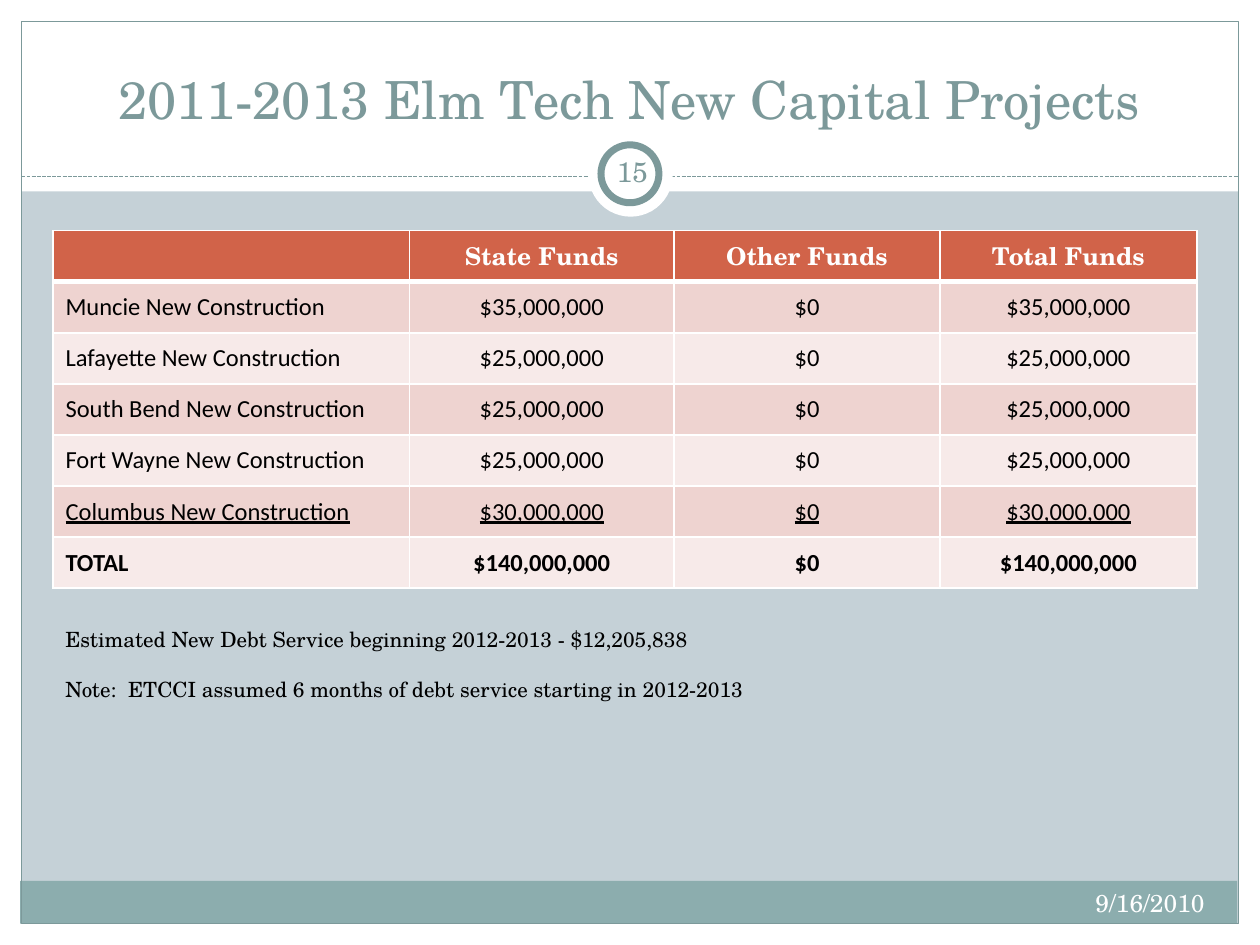
from dataclasses import dataclass

from lxml.etree import SubElement
from pptx import Presentation
from pptx.dml.color import RGBColor
from pptx.enum.dml import MSO_LINE_DASH_STYLE as Dash
from pptx.enum.shapes import MSO_CONNECTOR as Connector, MSO_SHAPE as Shape
from pptx.enum.text import MSO_ANCHOR as Anchor, PP_ALIGN as Align
from pptx.oxml import parse_xml
from pptx.oxml.ns import nsdecls, qn
from pptx.util import Emu, Inches, Pt

COLORS = {
    "white": "FFFFFF", "black": "000000", "backdrop": "C5D1D7",
    "teal": "7C999A", "footer": "8CADAE", "header": "D16349",
    "odd row": "EED3D0", "even row": "F7EAE9",
}
SERIF, SANS = "TeX Gyre Schola", "Calibri"
WIDTH, HEIGHT = Inches(10), Inches(7.5)


@dataclass(frozen=True)
class Box:
    """A place in percent of the slide's width and height."""
    left: float
    top: float
    width: float
    height: float

    def emu(self) -> tuple:
        return (across(self.left), down(self.top),
                across(self.width), down(self.height))


@dataclass(frozen=True)
class Panel:
    box: Box
    fill: str = ""
    line: str = ""
    line_width: float = 0.75
    kind: Shape = Shape.RECTANGLE


@dataclass(frozen=True)
class Style:
    size: int
    color: str
    font: str = SERIF
    align: Align = Align.LEFT
    bold: bool = False
    underline: bool = False


@dataclass(frozen=True)
class Label:
    box: Box
    lines: tuple
    style: Style
    anchor: Anchor = Anchor.TOP
    inset: float = 0
    gap: float = 0


def across(percent: float) -> Emu:
    return Emu(round(WIDTH * percent / 100))


def down(percent: float) -> Emu:
    return Emu(round(HEIGHT * percent / 100))


def rgb(name: str) -> RGBColor:
    return RGBColor.from_string(COLORS[name])


def style_paragraph(paragraph, style: Style) -> None:
    paragraph.alignment = style.align
    for run in paragraph.runs:
        font = run.font
        font.name, font.size = style.font, Pt(style.size)
        font.bold, font.underline = style.bold, style.underline
        font.color.rgb = rgb(style.color)


def draw_panel(slide, panel: Panel) -> None:
    shape = slide.shapes.add_shape(panel.kind, *panel.box.emu())
    shape.shadow.inherit = False
    if panel.fill:
        shape.fill.solid()
        shape.fill.fore_color.rgb = rgb(panel.fill)
    else:
        shape.fill.background()
    if panel.line:
        shape.line.color.rgb = rgb(panel.line)
        shape.line.width = Pt(panel.line_width)
    else:
        shape.line.fill.background()


def draw_divider(slide, left: float, right: float, top: float) -> None:
    divider = slide.shapes.add_connector(
        Connector.STRAIGHT, across(left), down(top), across(right), down(top))
    divider.line.color.rgb = rgb("teal")
    divider.line.width = Pt(0.75)
    divider.line.dash_style = Dash.SQUARE_DOT
    SubElement(divider._element.spPr, qn("a:effectLst"))


def draw_label(slide, label: Label) -> None:
    frame = slide.shapes.add_textbox(*label.box.emu()).text_frame
    frame.word_wrap = True
    frame.vertical_anchor = label.anchor
    if label.inset:
        frame.margin_left = frame.margin_right = Inches(label.inset)
        frame.margin_top = frame.margin_bottom = Inches(label.inset)
    frame.text = "\n".join(label.lines)
    for index, paragraph in enumerate(frame.paragraphs):
        style_paragraph(paragraph, label.style)
        if index:
            paragraph.space_before = Pt(label.gap)


def set_borders(cell, top: float, bottom: float) -> None:
    sides = (("L", 1), ("R", 1), ("T", top), ("B", bottom))
    for index, (side, width) in enumerate(sides):
        cell._tc.get_or_add_tcPr().insert(index, parse_xml(
            f'<a:ln{side} {nsdecls("a")} w="{Pt(width)}"><a:solidFill>'
            f'<a:srgbClr val="{COLORS["white"]}"/></a:solidFill></a:ln{side}>'))


def draw_funds_table(slide, box: Box, columns: tuple, rows: tuple) -> None:
    table = slide.shapes.add_table(len(rows), len(columns), *box.emu()).table
    for column, share in zip(table.columns, columns):
        column.width = across(share)
    last = len(rows) - 1
    for r, values in enumerate(rows):
        is_header, is_total = r == 0, r == last
        fill = "header" if is_header else "odd row" if r % 2 else "even row"
        for c, value in enumerate(values):
            cell = table.cell(r, c)
            cell.fill.solid()
            cell.fill.fore_color.rgb = rgb(fill)
            set_borders(cell, 3 if r == 1 else 1, 3 if is_header else 1)
            cell.vertical_anchor = Anchor.TOP if is_header else Anchor.MIDDLE
            if is_total and c:
                cell.margin_left = cell.margin_right = Inches(0.01)
                cell.margin_top, cell.margin_bottom = Inches(0.01), 0
            cell.text_frame.text = value
            style_paragraph(cell.text_frame.paragraphs[0], Style(
                14, "white" if is_header else "black",
                SERIF if is_header else SANS,
                Align.CENTER if c else Align.LEFT,
                bold=is_header or is_total, underline=r == last - 1))


# Frame around the slide, footer band
PANELS = (
    Panel(Box(0, 97.73, 100, 2.27), "white"),
    Panel(Box(0, 0, 100, 20.27), "white"),
    Panel(Box(0, 0, 1.7, 100), "white"),
    Panel(Box(98.3, 0, 1.7, 100), "white"),
    Panel(Box(1.6, 93.2, 96.6, 4.53), "footer"),
    Panel(Box(1.7, 2.27, 96.6, 95.46), line="teal"),
)
# Ring behind the page number
RING = (
    Panel(Box(46.7, 14, 6.7, 8.93), "white", kind=Shape.OVAL),
    Panel(Box(47.7, 15.33, 4.6, 6.13), "white", "teal", 4, Shape.OVAL),
)
LABELS = (
    Label(Box(3.3, 3.33, 93.3, 11.07),
          ("2011-2013 Elm Tech New Capital Projects",),
          Style(30, "teal", align=Align.CENTER), Anchor.BOTTOM),
    Label(Box(4.2, 65.6, 85.8, 12.13),
          ("Estimated New Debt Service beginning 2012-2013 - $12,205,838",
           "Note:  ETCCI assumed 6 months of debt service starting in 2012-2013"),
          Style(12, "black"), gap=14.5),
    Label(Box(63.3, 93.33, 33.3, 5.33), ("9/16/2010",),
          Style(14, "white", align=Align.RIGHT)),
    Label(Box(47.7, 14.93, 5, 6.4), ("15",),
          Style(16, "teal", align=Align.CENTER), Anchor.MIDDLE, inset=0.05),
)
# Funds per project; nothing comes from other funds
PROJECTS = (
    ("Muncie New Construction", 35_000_000),
    ("Lafayette New Construction", 25_000_000),
    ("South Bend New Construction", 25_000_000),
    ("Fort Wayne New Construction", 25_000_000),
    ("Columbus New Construction", 30_000_000),
)
TOTAL = ("TOTAL", sum(funds for _, funds in PROJECTS))
FUNDS_ROWS = (("", "State Funds", "Other Funds", "Total Funds"),) + tuple(
    (name, f"${funds:,}", "$0", f"${funds:,}")
    for name, funds in (*PROJECTS, TOTAL))


def main() -> None:
    deck = Presentation()
    deck.slide_width, deck.slide_height = WIDTH, HEIGHT
    slide = deck.slides.add_slide(deck.slide_layouts[6])
    slide.background.fill.solid()
    slide.background.fill.fore_color.rgb = rgb("backdrop")
    for panel in PANELS:
        draw_panel(slide, panel)
    draw_divider(slide, 1.7, 98.3, 18.67)
    for panel in RING:
        draw_panel(slide, panel)
    draw_funds_table(slide, Box(4.2, 24.4, 90.8, 37.87),
                     (28.3, 21, 21.1, 20.4), FUNDS_ROWS)
    for label in LABELS:
        draw_label(slide, label)
    deck.save("out.pptx")


if __name__ == "__main__":
    main()
